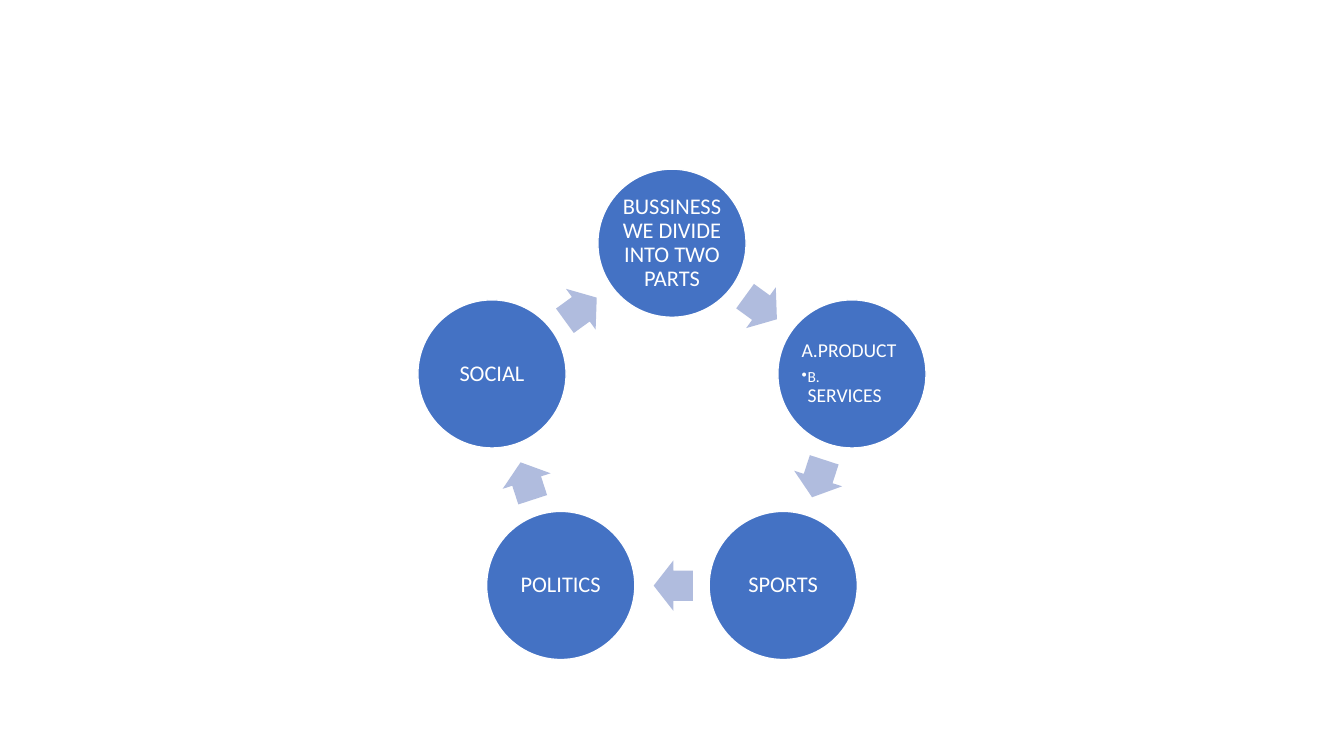
from math import cos, radians, sin

from lxml import etree
from pptx import Presentation
from pptx.dml.color import RGBColor
from pptx.enum.shapes import MSO_SHAPE
from pptx.enum.text import MSO_ANCHOR, PP_ALIGN
from pptx.oxml.ns import qn
from pptx.util import Inches, Pt

OVAL, ARROW = MSO_SHAPE.OVAL, MSO_SHAPE.RIGHT_ARROW
MIDDLE, CENTER, LEFT = MSO_ANCHOR.MIDDLE, PP_ALIGN.CENTER, PP_ALIGN.LEFT
COLORS = {"circle": "4472C4", "arrow": "B0BCDE", "white": "FFFFFF"}
FONT = "Calibri"
CELL = Inches(0.1)
CENTER_COLUMN, CENTER_ROW = 66.65, 42.9
CIRCLE_RING, ARROW_RING = 18.77, 15.2
ARROW_LAG = 0.5
CIRCLE_SIZE = 14.7
ARROW_WIDTH, ARROW_HEIGHT = 3.9, 5
TOPICS = ["BUSSINESS WE DIVIDE INTO TWO PARTS", None, "SPORTS", "POLITICS", "SOCIAL"]


def add_text(para, text, size=16, color="white"):
    span = para.add_run()
    span.text = text
    span.font.name = FONT
    span.font.size = Pt(size)
    span.font.color.rgb = RGBColor.from_string(COLORS[color])


class CycleSlide:
    """Draws a ring of circles and arrows on a grid of tenth-inch cells."""

    def __init__(self, deck):
        self.page = deck.slides.add_slide(deck.slide_layouts[6])

    def shape(self, kind, angle, ring, width, height, color):
        column = CENTER_COLUMN + ring * sin(radians(angle))
        row = CENTER_ROW - ring * cos(radians(angle))
        cells = (column - width / 2, row - height / 2, width, height)
        shape = self.page.shapes.add_shape(kind, *(round(cell * CELL) for cell in cells))
        shape.shadow.inherit = False
        shape.fill.solid()
        shape.fill.fore_color.rgb = RGBColor.from_string(COLORS[color])
        return shape

    def circle(self, angle):
        circle = self.shape(OVAL, angle, CIRCLE_RING, CIRCLE_SIZE, CIRCLE_SIZE, "circle")
        circle.line.color.rgb = RGBColor.from_string(COLORS["white"])
        circle.line.width = Pt(1)
        box = circle.text_frame
        box.word_wrap = True
        box.vertical_anchor = MIDDLE
        box.margin_left = box.margin_right = Inches(0.02)
        box.margin_top = box.margin_bottom = Inches(0.02)
        return box

    def arrow(self, angle):
        arrow = self.shape(ARROW, angle - ARROW_LAG, ARROW_RING, ARROW_WIDTH, ARROW_HEIGHT, "arrow")
        arrow.line.fill.background()
        arrow.adjustments[0] = 0.6
        arrow.adjustments[1] = 0.5
        arrow.rotation = angle

    def paragraph(self, para, align=CENTER, after=5.6):
        para.alignment = align
        para.line_spacing = 0.9
        para.space_after = Pt(after)

    def topic(self, angle, text):
        para = self.circle(angle).paragraphs[0]
        self.paragraph(para)
        add_text(para, text)

    def offerings(self, angle):
        box = self.circle(angle)
        product = box.paragraphs[0]
        self.paragraph(product, LEFT, 4.9)
        add_text(product, "A.PRODUCT", size=14)
        services = box.add_paragraph()
        services.level = 1
        self.paragraph(services, LEFT, 2.1)
        self.bullet(services)
        add_text(services, "B.", size=11)
        services.add_line_break()
        etree.SubElement(services._p[-1], qn("a:rPr"), sz="1100")
        add_text(services, "SERVICES", size=14)

    def bullet(self, para):
        properties = para._p.get_or_add_pPr()
        properties.set("marL", str(Inches(0.06)))
        properties.set("indent", str(-Inches(0.06)))
        etree.SubElement(properties, qn("a:buChar"), char="•")


def main():
    deck = Presentation()
    deck.slide_width, deck.slide_height = Inches(13.33), Inches(7.5)
    cycle = CycleSlide(deck)
    step = 360 / len(TOPICS)
    for index, topic in enumerate(TOPICS):
        angle = index * step
        if topic:
            cycle.topic(angle, topic)
        else:
            cycle.offerings(angle)
        cycle.arrow(angle + step / 2)
    deck.save("out.pptx")


if __name__ == "__main__":
    main()
